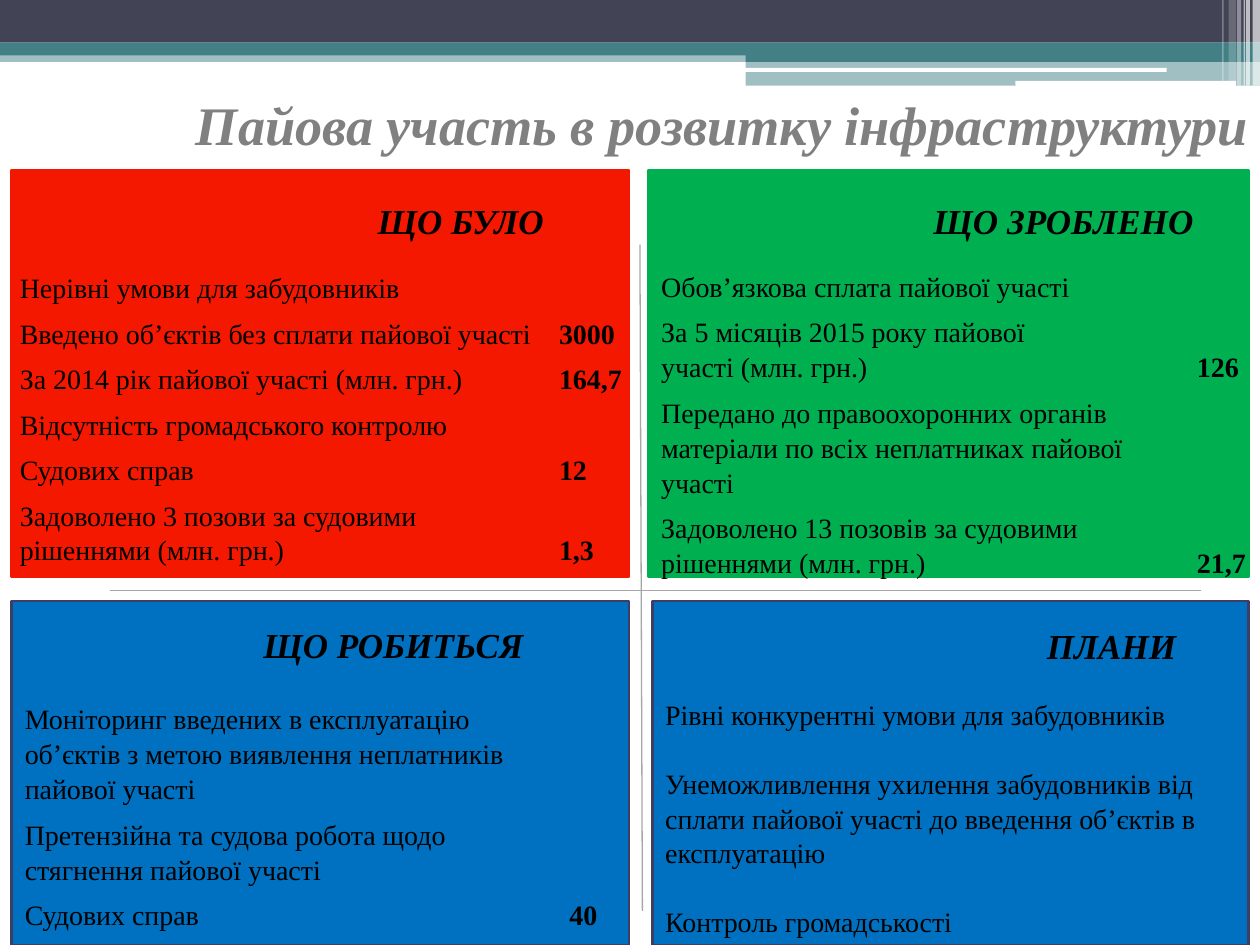
from dataclasses import dataclass

import lxml.etree
import pptx
import pptx.dml.color
import pptx.enum.shapes
import pptx.enum.text
import pptx.oxml.ns
import pptx.util

Cm = pptx.util.Cm
Pt = pptx.util.Pt
Shape = pptx.enum.shapes.MSO_SHAPE
Align = pptx.enum.text.PP_ALIGN
Anchor = pptx.enum.text.MSO_ANCHOR
qn = pptx.oxml.ns.qn


@dataclass(frozen=True)
class Theme:
    """Colours, font and type sizes of the deck."""
    font: str = "Times New Roman"
    title_size: int = 31
    heading_size: int = 20
    body_size: int = 16
    line_spacing: float = 1.04
    navy: str = "424456"
    teal: str = "438086"
    white: str = "FFFFFF"
    black: str = "000000"
    grey: str = "808080"
    rule: str = "A6A6A6"
    red: str = "F51801"
    green: str = "00B050"
    blue: str = "0070C0"
    border: str = "3D3E66"


THEME = Theme()


@dataclass(frozen=True)
class Panel:
    """One quadrant: its box, colours, inner offsets and wording."""
    box: tuple
    fill: str
    line: str
    heading: str
    heading_offset: tuple
    body_offset: tuple
    body_width: float
    items: tuple
    tab: float = 10.8
    gap: int = 6


PANELS = (
    Panel((13.16, 12.12, 12.01, 6.93), THEME.blue, THEME.border, "ПЛАНИ",
          (0.89, 0.35), (0, 1.8), 12.24, (
              (("Рівні конкурентні умови для забудовників",), ""),
              (("Унеможливлення ухилення забудовників від сплати пайової участі "
                "до введення об’єктів в експлуатацію",), ""),
              (("Контроль громадськості",), "")), gap=19),
    Panel((0.23, 12.12, 12.45, 6.93), THEME.blue, THEME.border, "ЩО РОБИТЬСЯ",
          (0.66, 0.33), (0.02, 1.88), 12.7, (
              (("Моніторинг введених в експлуатацію",
                "об’єктів з метою виявлення неплатників",
                "пайової участі"), ""),
              (("Претензійна та судова робота щодо",
                "стягнення пайової участі"), ""),
              (("Судових справ",), "40")), tab=10.98),
    Panel((13.08, 3.43, 12.09, 8.2), THEME.green, THEME.green, "ЩО ЗРОБЛЕНО",
          (1.32, 0.46), (0, 1.85), 12.32, (
              (("Обов’язкова сплата пайової участі",), ""),
              (("За 5 місяців 2015 року пайової", "участі (млн. грн.)"), "126"),
              (("Передано до правоохоронних органів",
                "матеріали по всіх неплатниках пайової",
                "участі"), ""),
              (("Задоволено 13 позовів за судовими",
                "рішеннями (млн. грн.)"), "21,7"))),
    Panel((0.23, 3.43, 12.45, 8.2), THEME.red, THEME.red, "ЩО БУЛО",
          (1.07, 0.46), (-0.08, 1.88), 13.03, (
              (("Нерівні умови для забудовників",), ""),
              (("Введено об’єктів без сплати пайової участі",), "3000"),
              (("За 2014 рік пайової участі (млн. грн.)",), "164,7"),
              (("Відсутність громадського контролю",), ""),
              (("Судових справ",), "12"),
              (("Задоволено 3 позови за судовими",
                "рішеннями (млн. грн.)"), "1,3")), tab=10.87),
)


def rgb(code):
    """Return the colour for a hex code."""
    return pptx.dml.color.RGBColor.from_string(code)


def add_block(page, box, fill, line=None, opacity=100, kind=Shape.RECTANGLE):
    """Add a flat filled shape."""
    shape = page.shapes.add_shape(kind, *map(Cm, box))
    shape.shadow.inherit = False
    shape.fill.solid()
    shape.fill.fore_color.rgb = rgb(fill)
    if opacity < 100:
        colour = shape.fill._xPr.find(".//" + qn("a:srgbClr"))
        lxml.etree.SubElement(colour, qn("a:alpha"), val=str(opacity * 1000))
    if line:
        shape.line.color.rgb = rgb(line)
        shape.line.width = Pt(1.5)
    else:
        shape.line.fill.background()


def add_frame(page, box, anchor=Anchor.TOP):
    """Add a wrapping text box and return its text frame."""
    frame = page.shapes.add_textbox(*map(Cm, box)).text_frame
    frame.word_wrap = True
    frame.vertical_anchor = anchor
    return frame


def add_span(para, text, size, colour=THEME.black, bold=False, italic=False):
    """Add one styled run to a paragraph."""
    span = para.add_run()
    span.text = text
    span.font.name = THEME.font
    span.font.size = Pt(size)
    span.font.bold = bold
    span.font.italic = italic
    span.font.color.rgb = rgb(colour)


def add_caption(page, box, text, size, colour=THEME.black, anchor=Anchor.TOP):
    """Add a right-aligned bold italic line."""
    para = add_frame(page, box, anchor).paragraphs[0]
    para.alignment = Align.RIGHT
    add_span(para, text, size, colour, True, True)


def add_banner(page, box):
    """Draw the layered bands and the fine stripes along the top."""
    left, top, width, height = box
    middle = left + 15.03
    rest = width - 15.03
    for x, y, w, h, fill, opacity in (
            (left, 1.02, width, 0.23, THEME.teal, 50),
            (left, 0, width, 0.86, THEME.navy, 100),
            (left, 0.86, width, 0.26, THEME.teal, 100),
            (middle, 0.99, rest, 0.26, THEME.teal, 100),
            (middle, 1.23, rest, 0.5, THEME.teal, 50)):
        add_block(page, (x, top + y, w, h), fill, opacity=opacity)
    for x, y, w, h in ((15.01, 1.37, 8.51, 0.08), (20.47, 1.63, 4.45, 0.1)):
        add_block(page, (left + x, top + y, w, h), THEME.white,
                  kind=Shape.ROUNDED_RECTANGLE)
    for x, w, drop, opacity in (
            (25.25, 0.15, 0, 65), (25.12, 0.08, 0, 65), (25.07, 0.03, 0, 60),
            (24.94, 0.08, 0, 40), (24.77, 0.15, 0.1, 20), (24.64, 0.03, 0.1, 30)):
        add_block(page, (left + x, top, w, height - drop), THEME.white, opacity=opacity)


def add_dividers(page, box):
    """Draw the thin cross between the four panels."""
    left, top, width, height = box
    for ends in ((12.9, 4.93, 12.95, 18.36), (2.21, 11.91, 24.21, 11.91)):
        x1, y1, x2, y2 = ends
        line = page.shapes.add_connector(
            pptx.enum.shapes.MSO_CONNECTOR.STRAIGHT,
            Cm(left + x1), Cm(top + y1), Cm(left + x2), Cm(top + y2))
        line.line.color.rgb = rgb(THEME.rule)
        line.line.width = Pt(0.75)
        lxml.etree.SubElement(line._element.spPr, qn("a:effectLst"))


def add_panel(page, panel):
    """Draw one quadrant with its heading and list of facts."""
    left, top, width, height = panel.box
    add_block(page, panel.box, panel.fill, panel.line)
    x, y = panel.heading_offset
    add_caption(page, (left + x, top + y, 9.91, 1.12), panel.heading, THEME.heading_size)
    x, y = panel.body_offset
    frame = add_frame(page, (left + x, top + y, panel.body_width, height - y))
    for number, (lines, value) in enumerate(panel.items):
        para = frame.add_paragraph() if number else frame.paragraphs[0]
        para.line_spacing = THEME.line_spacing
        para.space_after = Pt(panel.gap)
        for row, text in enumerate(lines):
            if row:
                para.add_line_break()
            add_span(para, text, THEME.body_size)
        if value:
            tabs = lxml.etree.SubElement(para._p.get_or_add_pPr(), qn("a:tabLst"))
            lxml.etree.SubElement(tabs, qn("a:tab"), pos=str(Cm(panel.tab)), algn="l")
            add_span(para, "\t" + value, THEME.body_size, bold=True)


def main():
    """Build and save the deck."""
    deck = pptx.Presentation()
    deck.slide_width, deck.slide_height = Cm(25.4), Cm(19.05)
    page = deck.slides.add_slide(deck.slide_layouts[6])
    add_banner(page, (0, 0, 25.4, 1.73))
    add_caption(page, (0.5, 0.33, 24.9, 2.95), "Пайова участь в розвитку інфраструктури",
                THEME.title_size, THEME.grey, Anchor.BOTTOM)
    add_dividers(page, (0, 0, 25.4, 19.05))
    for panel in PANELS:
        add_panel(page, panel)
    deck.save("out.pptx")


if __name__ == "__main__":
    main()
